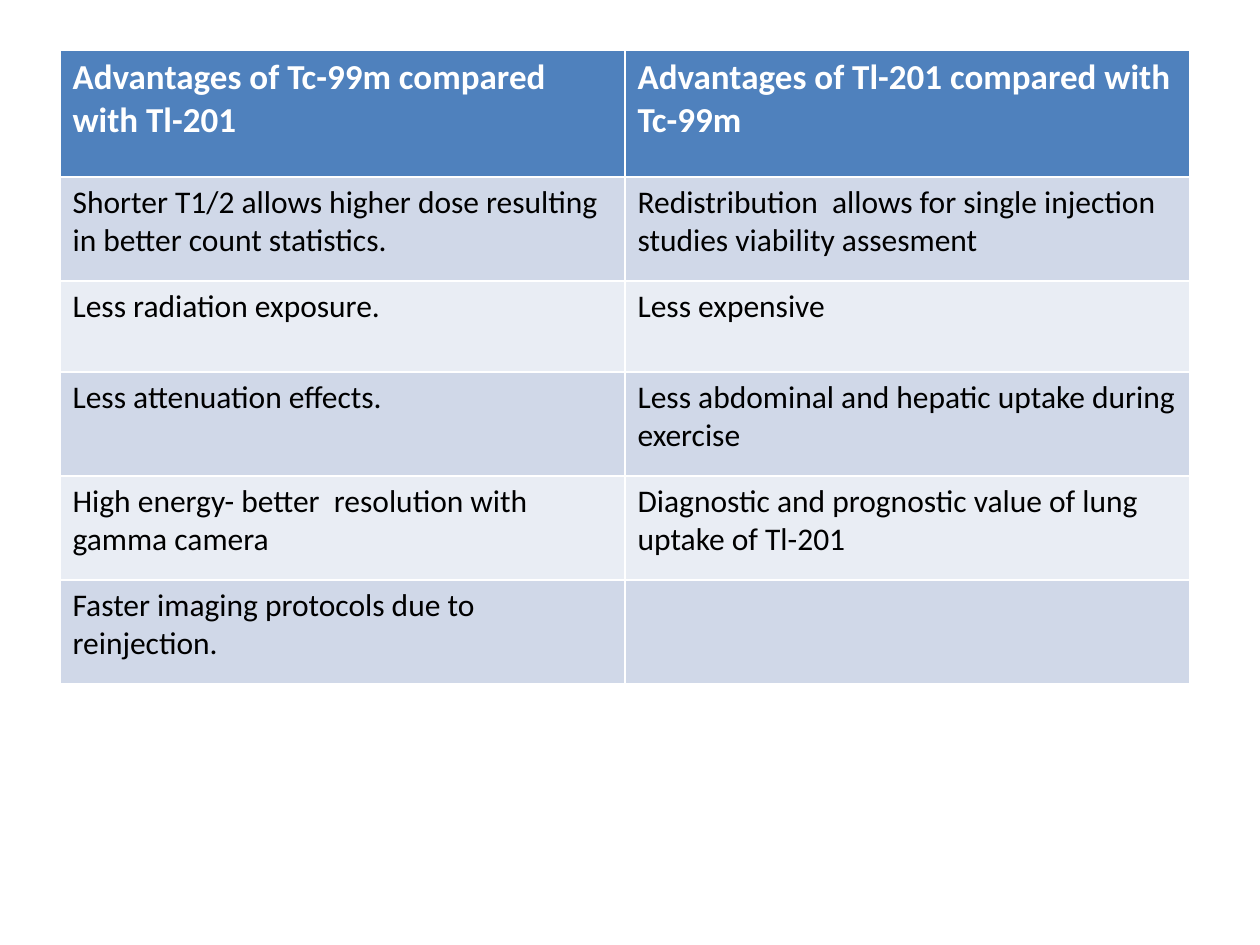
from typing import NamedTuple

from pptx import Presentation
from pptx import util as u
from pptx.dml.color import RGBColor

PX = u.Inches(1) / 126
SLIDE_WIDTH, SLIDE_HEIGHT = 1260, 945
TABLE_LEFT, TABLE_TOP = 60, 50
COLUMN_WIDTH = 565

FONT = "Calibri"
WHITE = RGBColor(0xFF, 0xFF, 0xFF)
BLACK = RGBColor(0x00, 0x00, 0x00)
HEADER_BLUE = RGBColor(0x4F, 0x81, 0xBD)
BAND_DARK = RGBColor(0xD0, 0xD8, 0xE8)
BAND_LIGHT = RGBColor(0xE9, 0xED, 0xF4)


class RowStyle(NamedTuple):
    fill: RGBColor
    color: RGBColor
    size: int
    bold: bool


class ComparisonRow(NamedTuple):
    height: int
    technetium: str
    thallium: str


HEADER = RowStyle(HEADER_BLUE, WHITE, 20, True)
BANDS = (
    RowStyle(BAND_DARK, BLACK, 18, False),
    RowStyle(BAND_LIGHT, BLACK, 18, False),
)

ROWS = [
    ComparisonRow(127, "Advantages of Tc-99m compared with Tl-201",
                  "Advantages of Tl-201 compared with Tc-99m"),
    ComparisonRow(104, "Shorter T1/2 allows higher dose resulting in better count statistics.",
                  "Redistribution  allows for single injection studies viability assesment"),
    ComparisonRow(91, "Less radiation exposure.", "Less expensive"),
    ComparisonRow(104, "Less attenuation effects.",
                  "Less abdominal and hepatic uptake during exercise"),
    ComparisonRow(104, "High energy- better  resolution with gamma camera",
                  "Diagnostic and prognostic value of lung uptake of Tl-201"),
    ComparisonRow(104, "Faster imaging protocols due to reinjection.", ""),
]


def px(length: int) -> u.Emu:
    return u.Emu(round(length * PX))


def fill_cell(cell, wording: str, style: RowStyle) -> None:
    cell.fill.solid()
    cell.fill.fore_color.rgb = style.fill
    if not wording:
        return
    cell.text_frame.text = wording
    font = cell.text_frame.paragraphs[0].runs[0].font
    font.name = FONT
    font.size = u.Pt(style.size)
    font.bold = style.bold
    font.color.rgb = style.color


def add_comparison_table(slide, rows: list[ComparisonRow]) -> None:
    """Draw the table; its default style supplies the white cell borders."""
    height = sum(row.height for row in rows)
    table = slide.shapes.add_table(
        len(rows), 2, px(TABLE_LEFT), px(TABLE_TOP), px(2 * COLUMN_WIDTH), px(height)
    ).table
    for column in table.columns:
        column.width = px(COLUMN_WIDTH)
    for index, row in enumerate(rows):
        table.rows[index].height = px(row.height)
        style = BANDS[(index - 1) % 2] if index else HEADER
        for column_index, wording in enumerate((row.technetium, row.thallium)):
            fill_cell(table.cell(index, column_index), wording, style)


def main() -> None:
    presentation = Presentation()
    presentation.slide_width = px(SLIDE_WIDTH)
    presentation.slide_height = px(SLIDE_HEIGHT)
    slide = presentation.slides.add_slide(presentation.slide_layouts[6])
    add_comparison_table(slide, ROWS)
    presentation.save("out.pptx")


if __name__ == "__main__":
    main()
